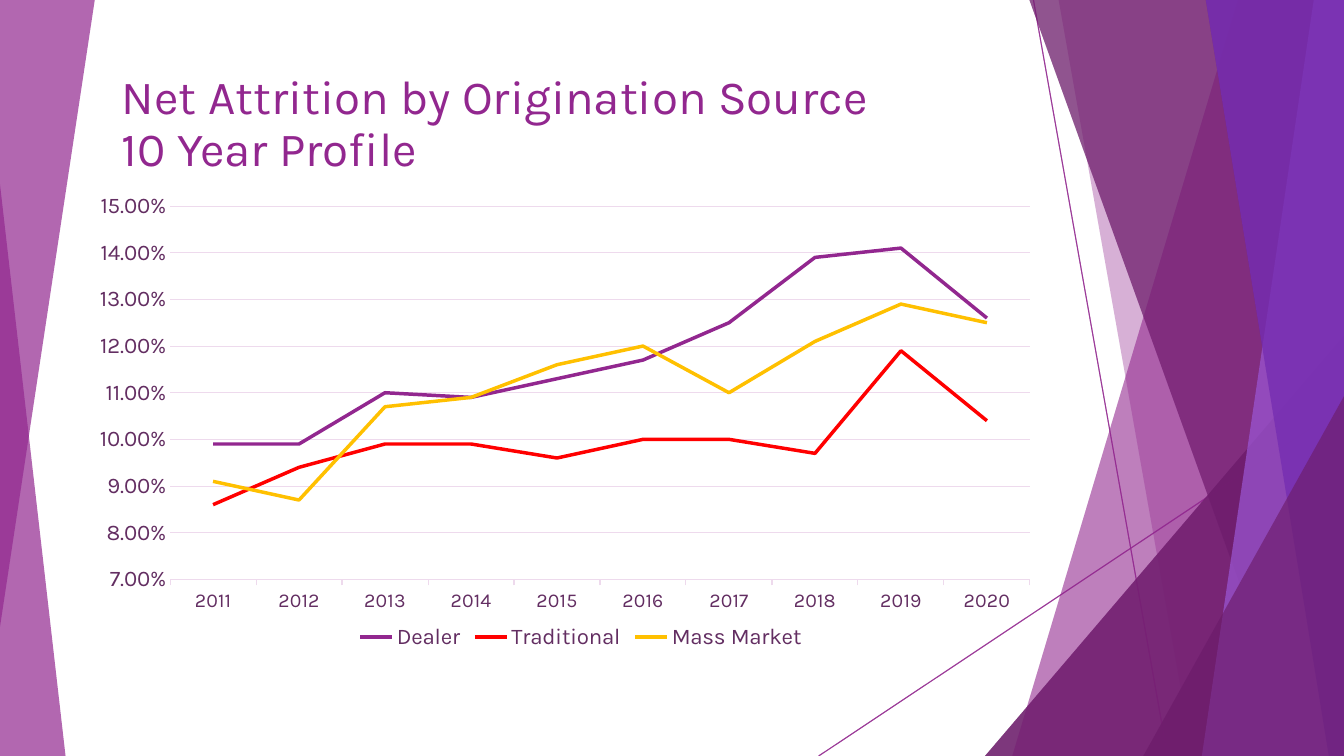
from lxml.etree import SubElement
from pptx import Presentation
from pptx.chart.data import CategoryChartData
from pptx.dml.color import RGBColor
from pptx.enum.chart import XL_CHART_TYPE as ChartType, XL_LEGEND_POSITION as LegendPosition
from pptx.enum.chart import XL_TICK_MARK as TickMark
from pptx.enum.shapes import MSO_CONNECTOR as Connector, MSO_SHAPE as Shape
from pptx.enum.text import MSO_ANCHOR as Anchor, MSO_AUTO_SIZE as AutoSize, PP_ALIGN as Align
from pptx.oxml.ns import qn
from pptx.util import Pt

PX = 9144
WIDTH, HEIGHT = 1333, 750
FONT = "Karla"

MAGENTA = RGBColor(0x92, 0x27, 0x8F)
PLUM = RGBColor(0x6D, 0x1D, 0x6B)
LAVENDER = RGBColor(0x9B, 0x57, 0xD3)
VIOLET = RGBColor(0x76, 0x2E, 0xB1)
LABEL = RGBColor(0x63, 0x2E, 0x62)
GRID = RGBColor(0xEE, 0xDA, 0xED)
RED = RGBColor(0xFF, 0x00, 0x00)
GOLD = RGBColor(0xFF, 0xC0, 0x00)

YEARS = [str(year) for year in range(2011, 2021)]
ATTRITION = [
    ("Dealer", MAGENTA, [0.099, 0.099, 0.11, 0.109, 0.113, 0.117, 0.125, 0.139, 0.141, 0.126]),
    ("Traditional", RED, [0.086, 0.094, 0.099, 0.099, 0.096, 0.1, 0.1, 0.097, 0.119, 0.104]),
    ("Mass Market", GOLD, [0.091, 0.087, 0.107, 0.109, 0.116, 0.12, 0.11, 0.121, 0.129, 0.125]),
]


def px(*lengths):
    return [length * PX for length in lengths]


def set_format(target, formats):
    for name, value in formats.items():
        setattr(target, name, value)


def set_font(font, size, color):
    set_format(font, {"name": FONT, "size": Pt(size), "bold": False})
    font.color.rgb = color


def set_line(line, color, width):
    line.color.rgb = color
    line.width = Pt(width)


def set_opacity(element, percent):
    color = next(element.iter(qn("a:srgbClr")))
    SubElement(color, qn("a:alpha")).set("val", str(percent * 1000))


def paint(shape, color, opacity):
    shape.shadow.inherit = False
    shape.fill.solid()
    shape.fill.fore_color.rgb = color
    shape.line.fill.background()
    set_opacity(shape.element.spPr, opacity)


def add_polygon(slide, points, color, opacity):
    builder = slide.shapes.build_freeform(*points[0], scale=PX)
    builder.add_line_segments(points[1:], close=True)
    paint(builder.convert_to_shape(), color, opacity)


def add_blade(slide, top_x, bottom_x, color, opacity):
    points = [(top_x, 0), (WIDTH, 0), (WIDTH, HEIGHT), (bottom_x, HEIGHT)]
    add_polygon(slide, points, color, opacity)


def add_corner(slide, left, top, width, apex, color, opacity):
    box = px(left, top, width, HEIGHT - top)
    triangle = slide.shapes.add_shape(Shape.ISOSCELES_TRIANGLE, *box)
    triangle.adjustments[0] = apex
    paint(triangle, color, opacity)


def add_ray(slide, start, end):
    ray = slide.shapes.add_connector(Connector.STRAIGHT, *px(*start, *end))
    set_line(ray.line, MAGENTA, 0.75)
    properties = ray.element.spPr
    set_opacity(properties, 70)
    SubElement(properties, qn("a:effectLst"))


def add_right_facets(slide):
    add_ray(slide, (1025, 0), (1158, HEIGHT))
    add_ray(slide, (WIDTH, 403), (812, HEIGHT))
    add_blade(slide, 1228, 1004, MAGENTA, 36)
    add_blade(slide, 1050, 1183, MAGENTA, 20)
    add_corner(slide, 977, 333, 356, 1, PLUM, 66)
    add_blade(slide, 1021, 1291, PLUM, 50)
    add_blade(slide, 1303, 1192, LAVENDER, 70)
    add_blade(slide, 1196, 1318, VIOLET, 80)
    add_corner(slide, 1134, 393, 199, 1, PLUM, 66)


def add_left_facets(slide):
    add_corner(slide, 0, 183, 65, 0, MAGENTA, 70)
    add_polygon(slide, [(0, 0), (94, 0), (0, 622)], MAGENTA, 70)


def place_title(slide, lines):
    title = slide.shapes.title
    box = px(111, 60, 906, 120)
    set_format(title, dict(zip(("left", "top", "width", "height"), box)))
    frame = title.text_frame
    set_format(frame, {
        "word_wrap": True,
        "auto_size": AutoSize.NONE,
        "vertical_anchor": Anchor.BOTTOM,
    })
    paragraph = frame.paragraphs[0]
    set_format(paragraph, {"alignment": Align.LEFT, "line_spacing": 0.9})
    for index, line in enumerate(lines):
        if index:
            paragraph.add_line_break()
        run = paragraph.add_run()
        run.text = line
        set_font(run.font, 34, MAGENTA)


def set_plot_layout(chart, x, y, width, height):
    plot_area = next(chart.element.iter(qn("c:plotArea")))
    layout = plot_area.find(qn("c:layout"))
    if layout is None:
        layout = SubElement(plot_area, qn("c:layout"))
        plot_area.insert(0, layout)
    manual = SubElement(layout, qn("c:manualLayout"))
    settings = {
        "layoutTarget": "inner", "xMode": "edge", "yMode": "edge",
        "x": x, "y": y, "w": width, "h": height,
    }
    for name, value in settings.items():
        SubElement(manual, qn(f"c:{name}")).set("val", str(value))


def format_axes(chart):
    years = chart.category_axis
    set_format(years, {
        "major_tick_mark": TickMark.OUTSIDE,
        "minor_tick_mark": TickMark.NONE,
        "has_major_gridlines": False,
    })
    set_font(years.tick_labels.font, 14, LABEL)
    set_line(years.format.line, GRID, 0.75)

    rates = chart.value_axis
    set_format(rates, {
        "minimum_scale": 0.07,
        "maximum_scale": 0.15,
        "major_unit": 0.01,
        "major_tick_mark": TickMark.NONE,
        "minor_tick_mark": TickMark.NONE,
        "has_major_gridlines": True,
    })
    labels = rates.tick_labels
    set_format(labels, {"number_format": "0.00%", "number_format_is_linked": False})
    set_font(labels.font, 16, LABEL)
    rates.format.line.fill.background()
    set_line(rates.major_gridlines.format.line, GRID, 0.75)


def add_attrition_chart(slide):
    data = CategoryChartData(number_format="0.00%")
    data.categories = YEARS
    for name, _, values in ATTRITION:
        data.add_series(name, values)
    frame = slide.shapes.add_chart(ChartType.LINE, *px(99, 186, 951, 463), data)
    chart = frame.chart
    set_format(chart, {"has_title": False, "has_legend": True})
    set_font(chart.font, 10, LABEL)
    set_format(chart.legend, {"position": LegendPosition.BOTTOM, "include_in_layout": False})
    set_font(chart.legend.font, 16, LABEL)
    plot = chart.plots[0]
    plot.vary_by_categories = False
    for series, (_, color, _) in zip(plot.series, ATTRITION):
        series.smooth = False
        set_line(series.format.line, color, 2.5)
    format_axes(chart)
    set_plot_layout(chart, 0.07, 0.04, 0.9, 0.8)


def main():
    presentation = Presentation()
    width, height = px(WIDTH, HEIGHT)
    set_format(presentation, {"slide_width": width, "slide_height": height})
    slide = presentation.slides.add_slide(presentation.slide_layouts[5])
    add_right_facets(slide)
    add_left_facets(slide)
    add_right_facets(slide)
    place_title(slide, ["Net Attrition by Origination Source", "10 Year Profile"])
    add_attrition_chart(slide)
    presentation.save("out.pptx")


if __name__ == "__main__":
    main()
